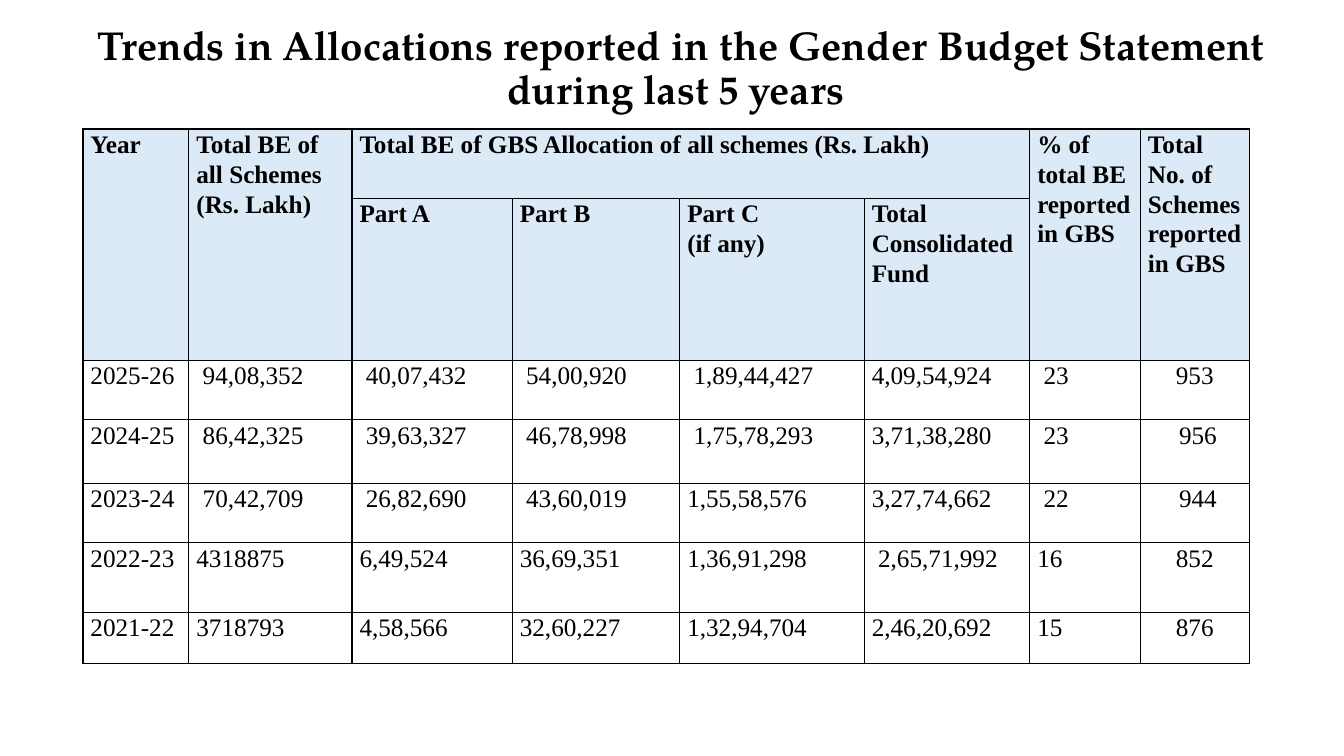
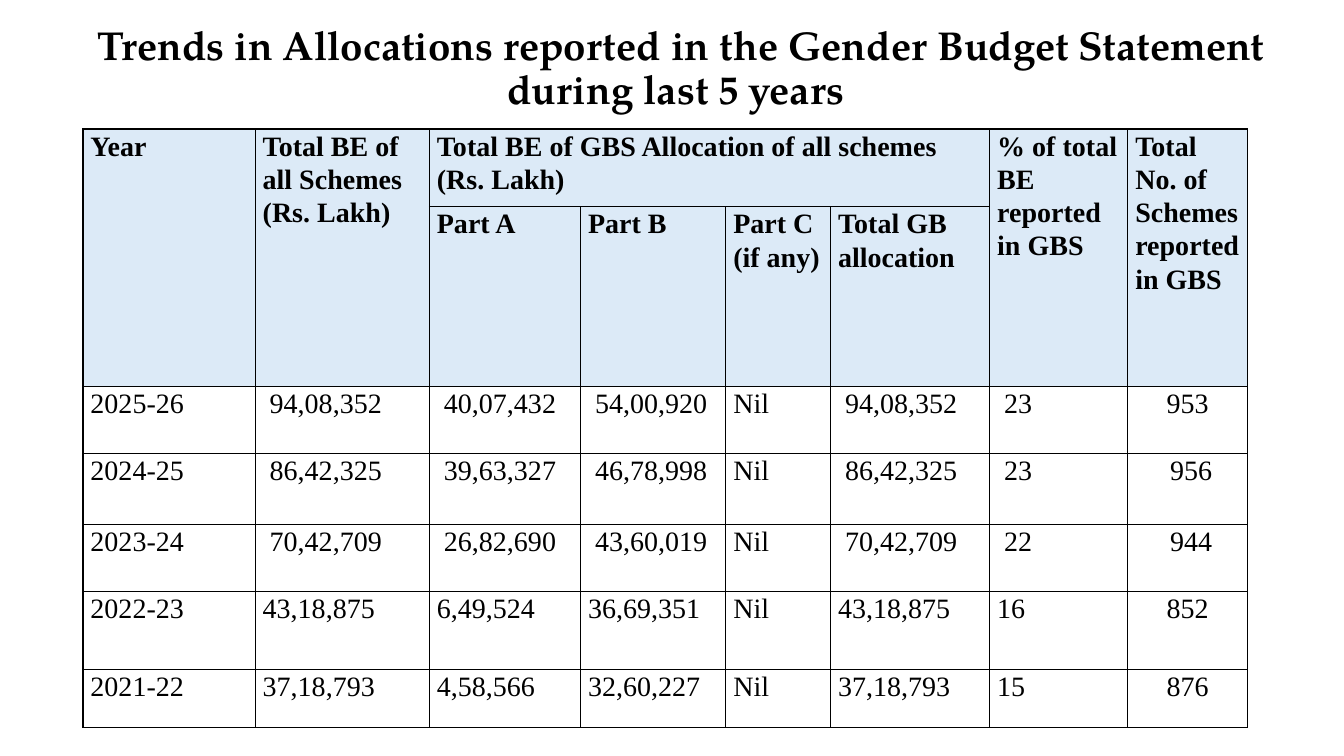
import pptx
import pptx.dml.color
import pptx.enum.text
import pptx.oxml
import pptx.oxml.ns
import pptx.util

Cm = pptx.util.Cm
Pt = pptx.util.Pt
CENTER = pptx.enum.text.PP_ALIGN.CENTER

COLORS = {"text": "000000", "border": "000000", "header": "DCEAF7"}
TITLE_FONT = "TeX Gyre Pagella"
TABLE_FONT = "Times New Roman"
TITLE = ("Trends in Allocations reported in the Gender Budget Statement "
         "during last 5 years ")
HEADER_ROWS = 2
PART_COLUMNS = range(2, 6)

# Columns that both tables show, newest year first
YEARS = ["2025-26", "2024-25", "2023-24", "2022-23", "2021-22"]
PART_A = [" 40,07,432", " 39,63,327", " 26,82,690", "6,49,524", "4,58,566"]
PART_B = [" 54,00,920", " 46,78,998", " 43,60,019", "36,69,351", "32,60,227"]
PERCENT = [" 23", " 23", " 22", "16", "15"]
SCHEMES = ["953", " 956", " 944", "852", "876"]
RECENT_TOTALS = [" 94,08,352", " 86,42,325", " 70,42,709"]

CONSOLIDATED = {
    "size": 18,
    "widths": [2.67, 4.11, 4.04, 4.22, 4.65, 4.17, 2.79, 2.74],
    "heights": [1.75, 3.76, 1.5, 1.6, 1.5, 1.75, 1.3],
    "total_label": "Total Consolidated Fund",
    "columns": [
        YEARS,
        RECENT_TOTALS + ["4318875", "3718793"],
        PART_A,
        PART_B,
        [" 1,89,44,427", " 1,75,78,293", "1,55,58,576", "1,36,91,298", "1,32,94,704"],
        ["4,09,54,924", "3,71,38,280", "3,27,74,662", " 2,65,71,992", "2,46,20,692"],
        PERCENT,
        SCHEMES,
    ],
}

GENDER_TOTALS = RECENT_TOTALS + ["43,18,875", "37,18,793"]
GENDER_BUDGET = {
    "size": 20,
    "widths": [4.34, 4.39, 3.81, 3.66, 2.64, 4.01, 3.48, 3.02],
    "heights": [1.96, 4.19, 1.68, 1.8, 1.68, 1.96, 1.47],
    "total_label": "Total GB allocation",
    "columns": [YEARS, GENDER_TOTALS, PART_A, PART_B, ["Nil"] * len(YEARS),
                GENDER_TOTALS, PERCENT, SCHEMES],
}


def color(name):
    return pptx.dml.color.RGBColor.from_string(COLORS[name])


def style_paragraph(para, font, size, bold, spacing):
    para.font.name = font
    para.font.size = Pt(size)
    para.font.bold = bold
    para.font.color.rgb = color("text")
    para.line_spacing = spacing


def add_title(page):
    box = page.shapes.add_textbox(Cm(1.45), Cm(0.43), Cm(31.42), Cm(2.64))
    frame = box.text_frame
    frame.word_wrap = True
    frame.vertical_anchor = pptx.enum.text.MSO_ANCHOR.MIDDLE
    frame.text = TITLE
    para = frame.paragraphs[0]
    style_paragraph(para, TITLE_FONT, 28.8, True, 0.9)
    para.alignment = CENTER


def add_borders(cell):
    properties = cell._tc.get_or_add_tcPr()
    for side in ("lnL", "lnR", "lnT", "lnB"):
        properties.append(pptx.oxml.parse_xml(
            f'<a:{side} {pptx.oxml.ns.nsdecls("a")} w="{Pt(1)}"><a:solidFill>'
            f'<a:srgbClr val="{COLORS["border"]}"/></a:solidFill></a:{side}>'))


def style_cell(cell, size, is_header, centered):
    add_borders(cell)
    if is_header:
        cell.fill.solid()
        cell.fill.fore_color.rgb = color("header")
    else:
        cell.fill.background()
    cell.margin_left = cell.margin_right = Cm(0.19)
    cell.margin_top = cell.margin_bottom = 0
    for para in cell.text_frame.paragraphs:
        style_paragraph(para, TABLE_FONT, size, is_header, 1.07)
        if centered:
            para.alignment = CENTER


def header_texts(total_label):
    """Return the two header rows; merged-away cells are empty."""
    return [
        ["Year", "Total BE of all Schemes\n(Rs. Lakh)",
         "Total BE of GBS Allocation of all schemes (Rs. Lakh)", "", "", "",
         "% of total BE reported in GBS", "Total No. of Schemes reported in GBS"],
        ["", "", "Part A", "Part B", "Part C\n(if any)", total_label, "", ""],
    ]


def merge_headers(table):
    table.cell(0, PART_COLUMNS[0]).merge(table.cell(0, PART_COLUMNS[-1]))
    for column in range(len(table.columns)):
        if column not in PART_COLUMNS:
            table.cell(0, column).merge(table.cell(1, column))


def add_budget_table(page, budget):
    widths, heights = budget["widths"], budget["heights"]
    table = page.shapes.add_table(
        len(heights), len(widths), Cm(2.09), Cm(3.25),
        Cm(sum(widths)), Cm(sum(heights))).table
    table.first_row = table.horz_banding = False
    for column, width in zip(table.columns, widths):
        column.width = Cm(width)
    for row, height in zip(table.rows, heights):
        row.height = Cm(height)

    texts = header_texts(budget["total_label"]) + list(zip(*budget["columns"]))
    last_column = len(widths) - 1
    for row_index, row_texts in enumerate(texts):
        is_header = row_index < HEADER_ROWS
        for column_index, text in enumerate(row_texts):
            cell = table.cell(row_index, column_index)
            cell.text = text
            style_cell(cell, budget["size"], is_header,
                       centered=not is_header and column_index == last_column)
    merge_headers(table)


def main():
    deck = pptx.Presentation()
    deck.slide_width, deck.slide_height = Cm(33.87), Cm(19.05)
    blank = deck.slide_layouts[6]
    for budget in (CONSOLIDATED, GENDER_BUDGET):
        page = deck.slides.add_slide(blank)
        add_title(page)
        add_budget_table(page, budget)
    deck.save("out.pptx")


if __name__ == "__main__":
    main()
